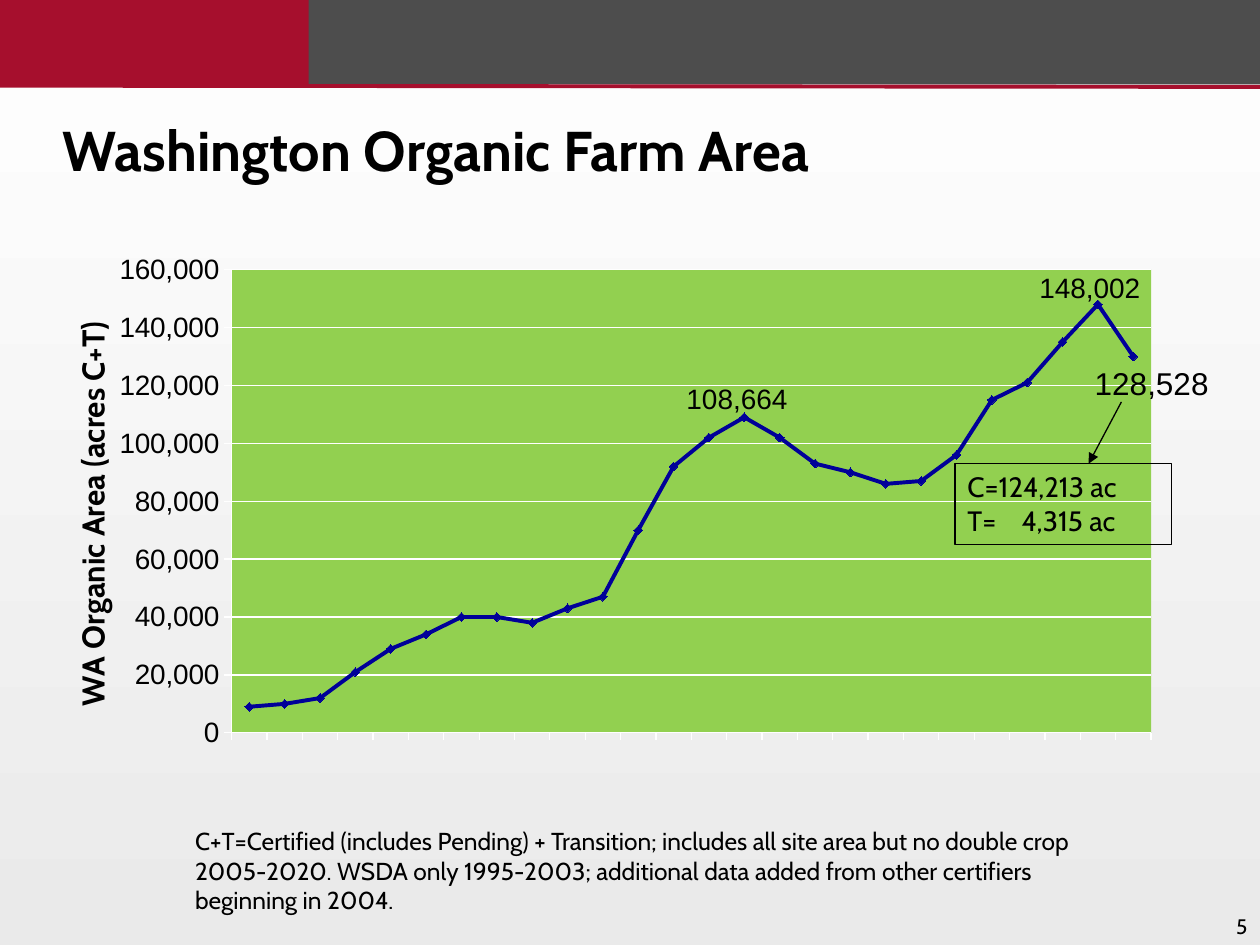
from dataclasses import dataclass

from pptx import Presentation
from pptx.chart.data import CategoryChartData
from pptx.dml.color import RGBColor
from pptx.enum.chart import XL_CHART_TYPE, XL_MARKER_STYLE, XL_TICK_LABEL_POSITION, XL_TICK_MARK
from pptx.enum.shapes import MSO_CONNECTOR, MSO_SHAPE
from pptx.enum.text import MSO_ANCHOR, MSO_AUTO_SIZE, PP_ALIGN
from pptx.oxml import parse_xml
from pptx.oxml.ns import nsdecls, qn
from pptx.util import Inches, Pt
from lxml import etree

LINE_MARKERS = XL_CHART_TYPE.LINE_MARKERS
DIAMOND = XL_MARKER_STYLE.DIAMOND
NO_LABELS = XL_TICK_LABEL_POSITION.NONE
TICK_OUT = XL_TICK_MARK.OUTSIDE
STRAIGHT = MSO_CONNECTOR.STRAIGHT
RECT = MSO_SHAPE.RECTANGLE
TOP, BOTTOM = MSO_ANCHOR.TOP, MSO_ANCHOR.BOTTOM
FIT_SHAPE = MSO_AUTO_SIZE.SHAPE_TO_FIT_TEXT
LEFT, RIGHT = PP_ALIGN.LEFT, PP_ALIGN.RIGHT


@dataclass(frozen=True)
class Theme:
    font: str = "Cabin"
    number_font: str = "Arial"
    black: str = "000000"
    white: str = "FFFFFF"
    mist: str = "EAEAEA"
    gray: str = "4D4D4D"
    crimson: str = "A60F2D"
    green: str = "92D050"
    navy: str = "000099"
    title: int = 32
    large: int = 18
    label: int = 16
    note: int = 14
    page: int = 12


YEARS = range(1995, 2021)
ACRES = [9000, 10000, 12000, 21000, 29000, 34000, 40000, 40000, 38000,
         43000, 47000, 70000, 92000, 102000, 109000, 102000, 93000, 90000,
         86000, 87000, 96000, 115000, 121000, 135000, 148000, 130000]


def rgb(value):
    return RGBColor.from_string(value)


def set_line(line, color, width):
    line.color.rgb = rgb(color)
    line.width = Pt(width)


def set_layout(parent, index, **values):
    """Place a chart part by fractions of the chart's size."""
    for old in parent.findall(qn("c:layout")):
        parent.remove(old)
    parts = "".join(f'<c:{k} val="{v}"/>' for k, v in values.items())
    parent.insert(index, parse_xml(
        f'<c:layout {nsdecls("c")}><c:manualLayout>{parts}</c:manualLayout></c:layout>'))


class SlideBuilder:
    def __init__(self, slide, theme):
        self.s = slide
        self.t = theme

    def background(self):
        fill = self.s.background.fill
        fill.gradient()
        fill.gradient_angle = 270
        for stop, color in zip(fill.gradient_stops, (self.t.white, self.t.mist)):
            stop.color.rgb = rgb(color)

    def box(self, x, y, w, h, fill=None, line=None):
        sp = self.s.shapes.add_shape(RECT, Inches(x), Inches(y), Inches(w), Inches(h))
        sp.shadow.inherit = False
        if fill:
            sp.fill.solid()
            sp.fill.fore_color.rgb = rgb(fill)
        else:
            sp.fill.background()
        if line:
            set_line(sp.line, line, 0.75)
        else:
            sp.line.fill.background()
        return sp

    def line(self, x1, y1, x2, y2, color, width, arrow=False):
        sp = self.s.shapes.add_connector(
            STRAIGHT, Inches(x1), Inches(y1), Inches(x2), Inches(y2))
        set_line(sp.line, color, width)
        sp_pr = sp._element.spPr
        if arrow:
            etree.SubElement(sp_pr.find(qn("a:ln")), qn("a:tailEnd"), type="triangle")
        etree.SubElement(sp_pr, qn("a:effectLst"))

    def text(self, x, y, w, h, text, size, **style):
        sp = self.s.shapes.add_textbox(Inches(x), Inches(y), Inches(w), Inches(h))
        self.fill_text(sp, text, size, **style)
        return sp

    def fill_text(self, sp, text, size, font=None, bold=False, align=LEFT,
                  anchor=TOP, grow=True, tab=None):
        tf = sp.text_frame
        tf.text = text
        tf.word_wrap = True
        tf.vertical_anchor = anchor
        if grow:
            tf.auto_size = FIT_SHAPE
        for p in tf.paragraphs:
            p.alignment = align
            if tab:
                tabs = etree.SubElement(p._p.get_or_add_pPr(), qn("a:tabLst"))
                etree.SubElement(tabs, qn("a:tab"), pos=str(Inches(tab)), algn="l")
            for r in p.runs:
                self.style(r.font, size, font, bold)

    def style(self, f, size, font=None, bold=False):
        f.name = font or self.t.font
        f.size = Pt(size)
        f.bold = bold
        f.color.rgb = rgb(self.t.black)

    def line_chart(self, x, y, w, h, categories, values, axis_title):
        t = self.t
        data = CategoryChartData(number_format="#,##0")
        data.categories = [str(c) for c in categories]
        data.add_series("Series 1", values)
        chart = self.s.shapes.add_chart(
            LINE_MARKERS, Inches(x), Inches(y), Inches(w), Inches(h), data).chart
        chart.has_legend = chart.has_title = False
        self.style(chart.font, t.label, t.number_font)

        # Plot area
        plot = chart.plots[0]
        plot.vary_by_categories = False
        area = chart._chartSpace.chart.plotArea
        set_layout(area, 0, layoutTarget="inner", xMode="edge", yMode="edge",
                   x=0.179, y=0.101, w=0.783, h=0.789)
        area.append(parse_xml(
            f'<c:spPr {nsdecls("c", "a")}><a:solidFill><a:srgbClr val="{t.green}"/>'
            '</a:solidFill></c:spPr>'))

        # Axes
        cat, val = chart.category_axis, chart.value_axis
        for axis in (cat, val):
            axis.major_tick_mark = TICK_OUT
            set_line(axis.format.line, t.white, 0.75)
            self.style(axis.tick_labels.font, t.label, t.number_font)
        cat.tick_label_position = NO_LABELS
        val.minimum_scale, val.maximum_scale, val.major_unit = 0, 160000, 20000
        val.tick_labels.number_format = "#,##0"
        val.tick_labels.number_format_is_linked = False
        set_line(val.major_gridlines.format.line, t.white, 0.75)
        tf = val.axis_title.text_frame
        tf.text = axis_title
        self.style(tf.paragraphs[0].runs[0].font, t.large, bold=True)
        tf._txBody.find(qn("a:bodyPr")).set("rot", "-5400000")
        set_layout(val.axis_title._element, 1, xMode="edge", yMode="edge", x=0.037, y=0.18)

        # Series
        series = plot.series[0]
        series.smooth = False
        set_line(series.format.line, t.navy, 2.25)
        series.marker.style = DIAMOND
        series.marker.size = 5
        series.marker.format.fill.solid()
        series.marker.format.fill.fore_color.rgb = rgb(t.navy)
        set_line(series.marker.format.line, t.navy, 0.75)


def main():
    prs = Presentation()
    prs.slide_width, prs.slide_height = Inches(10), Inches(7.5)
    t = Theme()
    b = SlideBuilder(prs.slides.add_slide(prs.slide_layouts[6]), t)

    # Header band
    b.background()
    b.box(0, 0, 10, 0.67, fill=t.gray)
    b.line(0, 0.68, 10, 0.69, t.crimson, 2.25)
    b.box(0, 0, 2.45, 0.67, fill=t.crimson)

    # Chart and title
    b.line_chart(0.17, 1.67, 9.32, 4.66, YEARS, ACRES, "WA Organic Area (acres C+T)")
    title = b.text(0, 0.92, 10, 0.59, "Washington Organic Farm Area", t.title,
                   bold=True, anchor=BOTTOM)
    title.text_frame.margin_left = title.text_frame.margin_right = Inches(0.5)
    title.text_frame.paragraphs[0].line_spacing = 0.9

    # Values called out on the chart
    for x, y, value, size in ((5.35, 2.98, "108,664", t.label),
                              (8.59, 2.84, "128,528", t.large),
                              (8.15, 2.1, "148,002", t.label)):
        b.text(x, y, 1.17, 0.37, value, size, font=t.number_font)

    # Breakdown of the last value
    split = b.box(7.58, 3.68, 1.72, 0.64, line=t.black)
    b.fill_text(split, "C=124,213 ac\nT=\t4,315 ac", t.label, tab=0.43)
    b.line(8.9, 3.19, 8.64, 3.68, t.black, 0.75, arrow=True)

    # Footnote and page number
    b.text(1.45, 6.51, 7.6, 0.57,
           "C+T=Certified (includes Pending) + Transition; includes all site area "
           "but no double crop 2005-2020. WSDA only 1995-2003; additional data added "
           "from other certifiers beginning in 2004.", t.note)
    b.text(8.64, 6.98, 1.36, 0.52, "5", t.page, align=RIGHT, anchor=BOTTOM, grow=False)

    prs.save("out.pptx")


if __name__ == "__main__":
    main()
